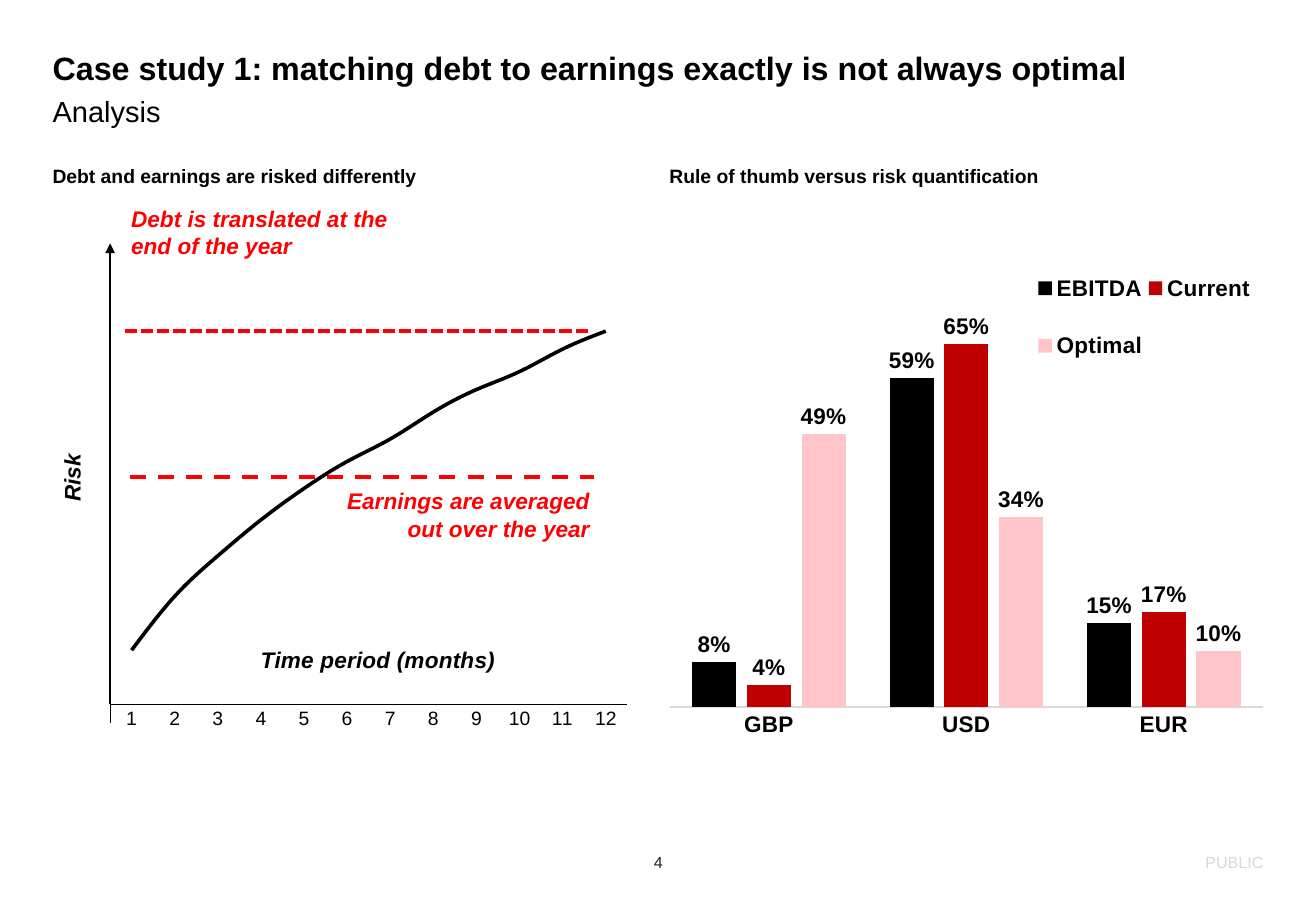
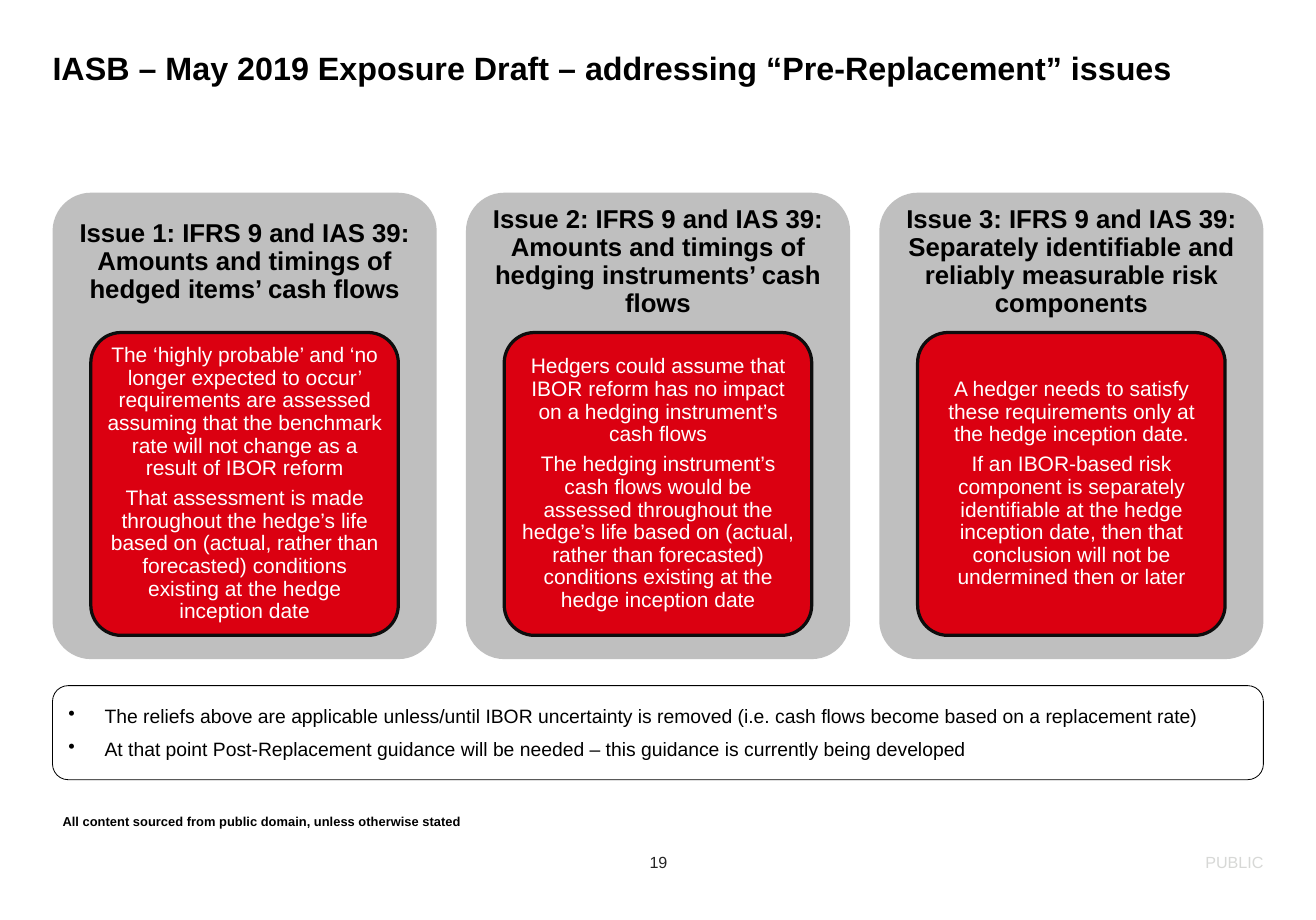
import pptx
import pptx.chart.data
import pptx.dml.color
import pptx.enum.chart
import pptx.enum.dml
import pptx.enum.shapes
import pptx.enum.text
import pptx.oxml.ns
import pptx.util
from lxml import etree

Cm = pptx.util.Cm
Pt = pptx.util.Pt
qn = pptx.oxml.ns.qn
ALIGN = pptx.enum.text.PP_ALIGN
ANCHOR = pptx.enum.text.MSO_ANCHOR
DASH = pptx.enum.dml.MSO_LINE
CHART = pptx.enum.chart
ROUNDED = pptx.enum.shapes.MSO_SHAPE.ROUNDED_RECTANGLE

FONT = "Arial"
BLACK, WHITE, RED, BRAND_RED = "000000", "FFFFFF", "FF0000", "DB0011"
PANEL_GREY, PAGE_GREY, PUBLIC_GREY, AXIS_GREY = "BFBFBF", "252525", "D7D8D6", "D9D9D9"
MARGIN, CONTENT_WIDTH = 1.15, 26.5
NO_INSET, BOX_INSET = (0, 0), (0.25, 0.13)

CASE_TITLE = "Case study 1: matching debt to earnings exactly is not always optimal"
COLUMN_HEADINGS = [
    (1.15, "Debt and earnings are risked differently"),
    (14.65, "Rule of thumb versus risk quantification"),
]
CURRENCIES = ["GBP", "USD", "EUR"]
CURRENCY_SERIES = [
    ("EBITDA", [0.08, 0.59, 0.15], "000000"),
    ("Current", [0.04, 0.65, 0.17], "C00000"),
    ("Optimal", [0.49, 0.34, 0.1], "FFC5C9"),
]
MONTHLY_RISK = [29, 41, 50, 58, 65, 71, 76, 82, 87, 91, 96, 100]
RISK_NOTES = [
    ("Debt is translated at the end of the year", (2.62, 4.35, 6.8, 2.72), ALIGN.LEFT),
    ("Earnings are averaged out over the year", (6.76, 10.54, 6.4, 2.72), ALIGN.RIGHT),
]
RISK_LEVELS = [
    ((2.74, 7.24), (12.9, 7.24), DASH.SQUARE_DOT),
    ((2.84, 10.44), (13, 10.44), DASH.DASH),
]

IASB_TITLE = "IASB – May 2019 Exposure Draft – addressing “Pre-Replacement” issues"
ISSUES = [
    ("Issue 1: IFRS 9 and IAS 39: Amounts and timings of hedged items’ cash flows", [
        "The ‘highly probable’ and ‘no longer expected to occur’ requirements are assessed "
        "assuming that the benchmark rate will not change as a result of IBOR reform",
        "That assessment is made throughout the hedge’s life based on (actual, rather than "
        "forecasted) conditions existing at the hedge inception date",
    ]),
    ("Issue 2: IFRS 9 and IAS 39: Amounts and timings of hedging instruments’ cash flows", [
        "Hedgers could assume that IBOR reform has no impact on a hedging instrument’s cash flows",
        "The hedging instrument’s cash flows would be assessed throughout the hedge’s life based "
        "on (actual, rather than forecasted) conditions existing at the hedge inception date",
    ]),
    ("Issue 3: IFRS 9 and IAS 39: Separately identifiable and reliably measurable risk components", [
        "A hedger needs to satisfy these requirements only at the hedge inception date.",
        "If an IBOR-based risk component is separately identifiable at the hedge inception date, "
        "then that conclusion will not be undermined then or later",
    ]),
]
RELIEFS = [
    "The reliefs above are applicable unless/until IBOR uncertainty is removed "
    "(i.e. cash flows become based on a replacement rate)",
    "At that point Post-Replacement guidance will be needed – "
    "this guidance is currently being developed",
]
SOURCE_NOTE = "All content sourced from public domain, unless otherwise stated"


def rgb(value):
    return pptx.dml.color.RGBColor.from_string(value)


def lengths(box):
    return [Cm(value) for value in box]


def style_font(font, size, color=BLACK, bold=False, italic=False):
    font.name = FONT
    font.size = Pt(size)
    font.bold = bold
    font.italic = italic
    font.color.rgb = rgb(color)


def write(frame, texts, size, color=BLACK, bold=False, italic=False, align=ALIGN.LEFT,
          anchor=ANCHOR.TOP, inset=BOX_INSET, wrap=True, line_spacing=1.0, before=0, after=0,
          bullet=None):
    frame.word_wrap = wrap
    frame.auto_size = pptx.enum.text.MSO_AUTO_SIZE.NONE
    frame.vertical_anchor = anchor
    frame.margin_left = frame.margin_right = Cm(inset[0])
    frame.margin_top = frame.margin_bottom = Cm(inset[1])
    frame.text = "\n".join(texts)
    for paragraph in frame.paragraphs:
        paragraph.alignment = align
        paragraph.line_spacing = line_spacing
        paragraph.space_before = Pt(before)
        paragraph.space_after = Pt(after)
        properties = paragraph._p.get_or_add_pPr()
        indent = Cm(0.79) if bullet else 0
        properties.set("marL", str(indent))
        properties.set("indent", str(-indent))
        if bullet:
            etree.SubElement(properties, qn("a:buChar")).set("char", bullet)
        else:
            etree.SubElement(properties, qn("a:buNone"))
        for run in paragraph.runs:
            style_font(run.font, size, color, bold, italic)


def add_text(slide, box, text, size, **style):
    shape = slide.shapes.add_textbox(*lengths(box))
    write(shape.text_frame, [text], size, **style)
    return shape


def fill_placeholder(placeholder, box, text, size, **style):
    placeholder.left, placeholder.top, placeholder.width, placeholder.height = lengths(box)
    write(placeholder.text_frame, [text], size, inset=NO_INSET, **style)


def add_panel(slide, box, fill, line=None, line_width=0, radius=None):
    panel = slide.shapes.add_shape(ROUNDED, *lengths(box))
    panel.shadow.inherit = False
    panel.fill.solid()
    panel.fill.fore_color.rgb = rgb(fill)
    if radius:
        panel.adjustments[0] = radius
    if line:
        panel.line.color.rgb = rgb(line)
        panel.line.width = Pt(line_width)
    else:
        panel.line.fill.background()
    return panel


def add_line(slide, start, end, color, width, dash=None, arrow=False):
    straight = pptx.enum.shapes.MSO_CONNECTOR.STRAIGHT
    connector = slide.shapes.add_connector(straight, *lengths(start + end))
    connector.line.color.rgb = rgb(color)
    connector.line.width = Pt(width)
    if dash:
        connector.line.dash_style = dash
    properties = connector._element.spPr
    if arrow:
        etree.SubElement(properties.find(qn("a:ln")), qn("a:tailEnd")).set("type", "triangle")
    etree.SubElement(properties, qn("a:effectLst"))


def set_layout(element, index, x, y, width=None, height=None, inner=False):
    for existing in element.findall(qn("c:layout")):
        element.remove(existing)
    layout = etree.Element(qn("c:layout"))
    manual = etree.SubElement(layout, qn("c:manualLayout"))
    settings = [("layoutTarget", "inner" if inner else None), ("xMode", "edge"),
                ("yMode", "edge"), ("x", x), ("y", y), ("w", width), ("h", height)]
    for name, value in settings:
        if value is not None:
            etree.SubElement(manual, qn("c:" + name)).set("val", str(value))
    element.insert(index, layout)


def add_chart(slide, kind, box, categories, series, plot_area, value_range, number_format):
    data = pptx.chart.data.CategoryChartData(number_format=number_format)
    data.categories = categories
    for name, values in series:
        data.add_series(name, values)
    chart = slide.shapes.add_chart(kind, *lengths(box), data).chart
    chart.has_title = False
    chart.has_legend = False
    style_font(chart.font, 14)
    chart.plots[0].vary_by_categories = False
    chart.value_axis.minimum_scale, chart.value_axis.maximum_scale = value_range
    chart.value_axis.has_major_gridlines = False
    for axis in (chart.category_axis, chart.value_axis):
        axis.major_tick_mark = axis.minor_tick_mark = CHART.XL_TICK_MARK.NONE
    set_layout(chart._chartSpace.chart.plotArea, 0, *plot_area, inner=True)
    return chart


def style_axis(axis, size, bold, line_color, line_width):
    style_font(axis.tick_labels.font, size, bold=bold)
    axis.format.line.color.rgb = rgb(line_color)
    axis.format.line.width = Pt(line_width)


def add_currency_chart(slide):
    chart = add_chart(slide, CHART.XL_CHART_TYPE.COLUMN_CLUSTERED, (14.65, 4.35, 13, 14),
                      CURRENCIES, [entry[:2] for entry in CURRENCY_SERIES],
                      (0, 0.184, 1, 0.611), (0, 0.7), "0%")
    chart.value_axis.visible = False
    style_axis(chart.category_axis, 14, True, AXIS_GREY, 1)
    plot = chart.plots[0]
    plot.gap_width = 100
    plot.overlap = -24
    for series, (_, _, color) in zip(plot.series, CURRENCY_SERIES):
        series.format.fill.solid()
        series.format.fill.fore_color.rgb = rgb(color)
        labels = series.data_labels
        labels.show_value = True
        labels.number_format = "0%"
        labels.number_format_is_linked = False
        labels.position = CHART.XL_LABEL_POSITION.OUTSIDE_END
        style_font(labels.font, 14, bold=True)
    chart.has_legend = True
    chart.legend.position = CHART.XL_LEGEND_POSITION.BOTTOM
    chart.legend.include_in_layout = False
    style_font(chart.legend.font, 14, bold=True)
    set_layout(chart.legend._element, 1, 0.61, 0.07, 0.38, 0.23)


def add_risk_chart(slide):
    months = [str(month) for month in range(1, len(MONTHLY_RISK) + 1)]
    chart = add_chart(slide, CHART.XL_CHART_TYPE.LINE, (1.83, 4.45, 12.32, 13.9), months,
                      [("Series 1", MONTHLY_RISK)], (0.047, 0.074, 0.919, 0.715),
                      (17, 118), "General")
    style_axis(chart.category_axis, 12, False, BLACK, 0.75)
    style_axis(chart.value_axis, 9, False, BLACK, 0.75)
    chart.value_axis.tick_label_position = CHART.XL_TICK_LABEL_POSITION.NONE
    series = chart.plots[0].series[0]
    series.smooth = True
    series.format.line.color.rgb = rgb(BLACK)
    series.format.line.width = Pt(2.25)
    title = chart.category_axis.axis_title
    title.text_frame.text = "Time period (months)"
    style_font(title.text_frame.paragraphs[0].runs[0].font, 14, bold=True, italic=True)
    set_layout(title._element, 1, 0.307, 0.69)


def add_slide(presentation, layout_index, title, number):
    slide = presentation.slides.add_slide(presentation.slide_layouts[layout_index])
    fill_placeholder(slide.shapes.title, (MARGIN, 1.15, CONTENT_WIDTH, 0.68), title, 20,
                     bold=True, line_spacing=0.9)
    footer = dict(anchor=ANCHOR.MIDDLE, inset=NO_INSET, wrap=False)
    add_text(slide, (13.41, 18.64, 2, 0.48), number, 10, color=PAGE_GREY,
             align=ALIGN.CENTER, **footer)
    add_text(slide, (21.21, 18.64, 6.44, 0.48), "PUBLIC", 10, color=PUBLIC_GREY,
             align=ALIGN.RIGHT, **footer)
    return slide


def build_case_study(presentation):
    slide = add_slide(presentation, 1, CASE_TITLE, "4")
    fill_placeholder(slide.placeholders[1], (MARGIN, 2.05, CONTENT_WIDTH, 0.76), "Analysis", 18,
                     before=2)
    for left, heading in COLUMN_HEADINGS:
        add_text(slide, (left, 3.6, 13, 0.5), heading, 12, bold=True, inset=NO_INSET)
    add_currency_chart(slide)
    add_risk_chart(slide)
    add_line(slide, (2.41, 15.82), (2.41, 5.33), BLACK, 0.5, arrow=True)
    risk_label = add_text(slide, (0.07, 10.03, 3, 0.86), "Risk", 14, bold=True, italic=True,
                          align=ALIGN.CENTER)
    risk_label.rotation = 270
    for start, end, dash in RISK_LEVELS:
        add_line(slide, start, end, RED, 2.5, dash)
    for note, box, align in RISK_NOTES:
        add_text(slide, box, note, 14, color=RED, bold=True, italic=True, align=align)


def build_exposure_draft(presentation):
    slide = add_slide(presentation, 5, IASB_TITLE, "19")
    gap, top, inner_width = 0.64, 4.22, 6.73
    width = (CONTENT_WIDTH - gap * (len(ISSUES) - 1)) / len(ISSUES)
    centered = dict(align=ALIGN.CENTER, anchor=ANCHOR.MIDDLE, line_spacing=0.9)
    for index, (heading, points) in enumerate(ISSUES):
        left = MARGIN + index * (width + gap)
        add_panel(slide, (left, top, width, 10.21), PANEL_GREY, radius=0.1)
        add_text(slide, (left, top, width, 3.05), heading, 16, bold=True,
                 inset=(0.18, 0.18), **centered)
        card = add_panel(slide, (left + (width - inner_width) / 2, 7.28, inner_width, 6.63),
                         BRAND_RED, "0D0D0D", 2, radius=0.1)
        write(card.text_frame, points, 13, color=WHITE, inset=(0.1, 0.08), after=4.5, **centered)
    reliefs = add_panel(slide, (MARGIN, 15.01, CONTENT_WIDTH, 2.06), WHITE, BLACK, 0.5)
    write(reliefs.text_frame, RELIEFS, 12, anchor=ANCHOR.MIDDLE, after=6, bullet="•")
    add_text(slide, (1.12, 17.68, 9.32, 0.61), SOURCE_NOTE, 8, bold=True, wrap=False)


def main():
    presentation = pptx.Presentation()
    presentation.slide_width, presentation.slide_height = Cm(28.8), Cm(20.14)
    build_case_study(presentation)
    build_exposure_draft(presentation)
    presentation.save("out.pptx")


if __name__ == "__main__":
    main()
